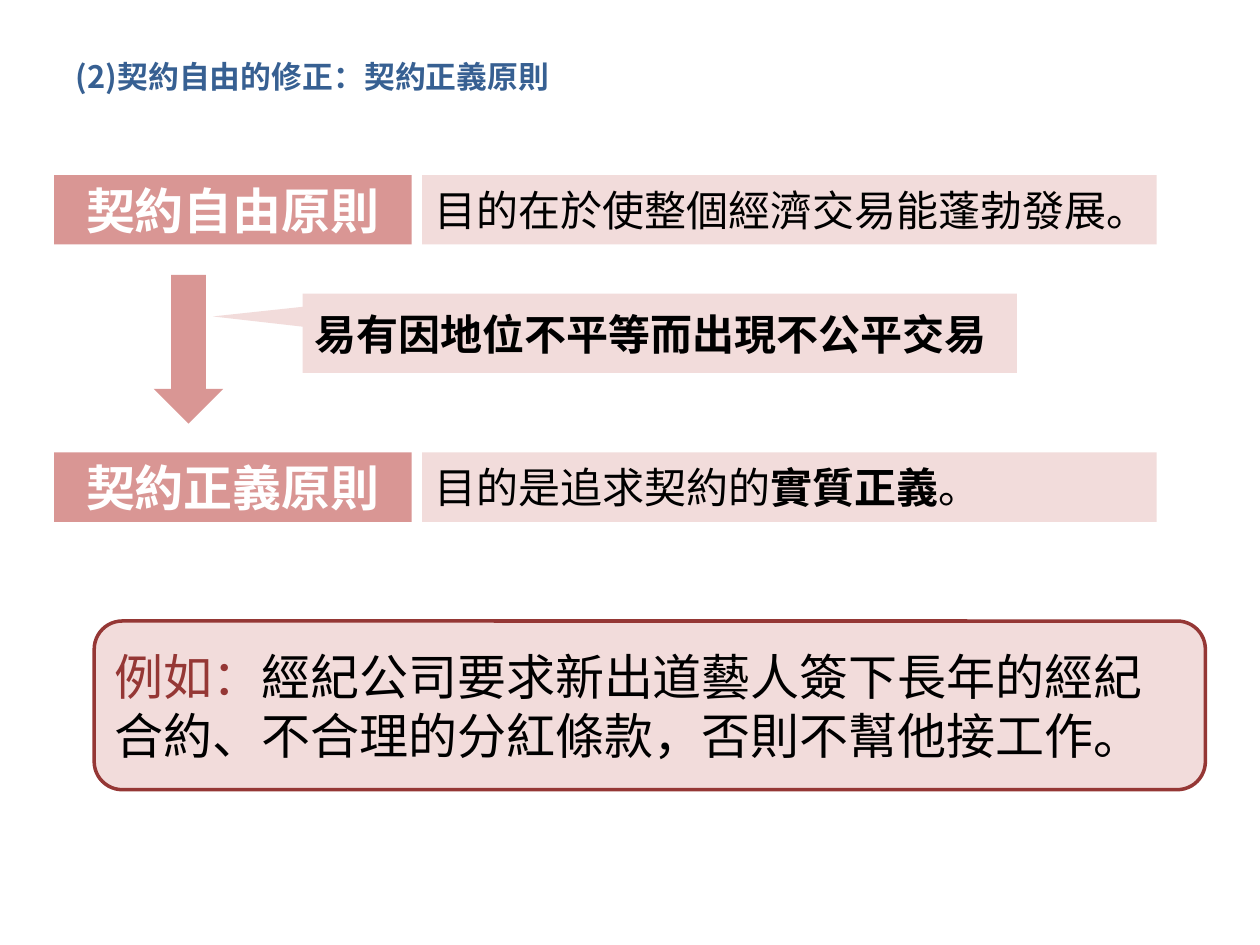
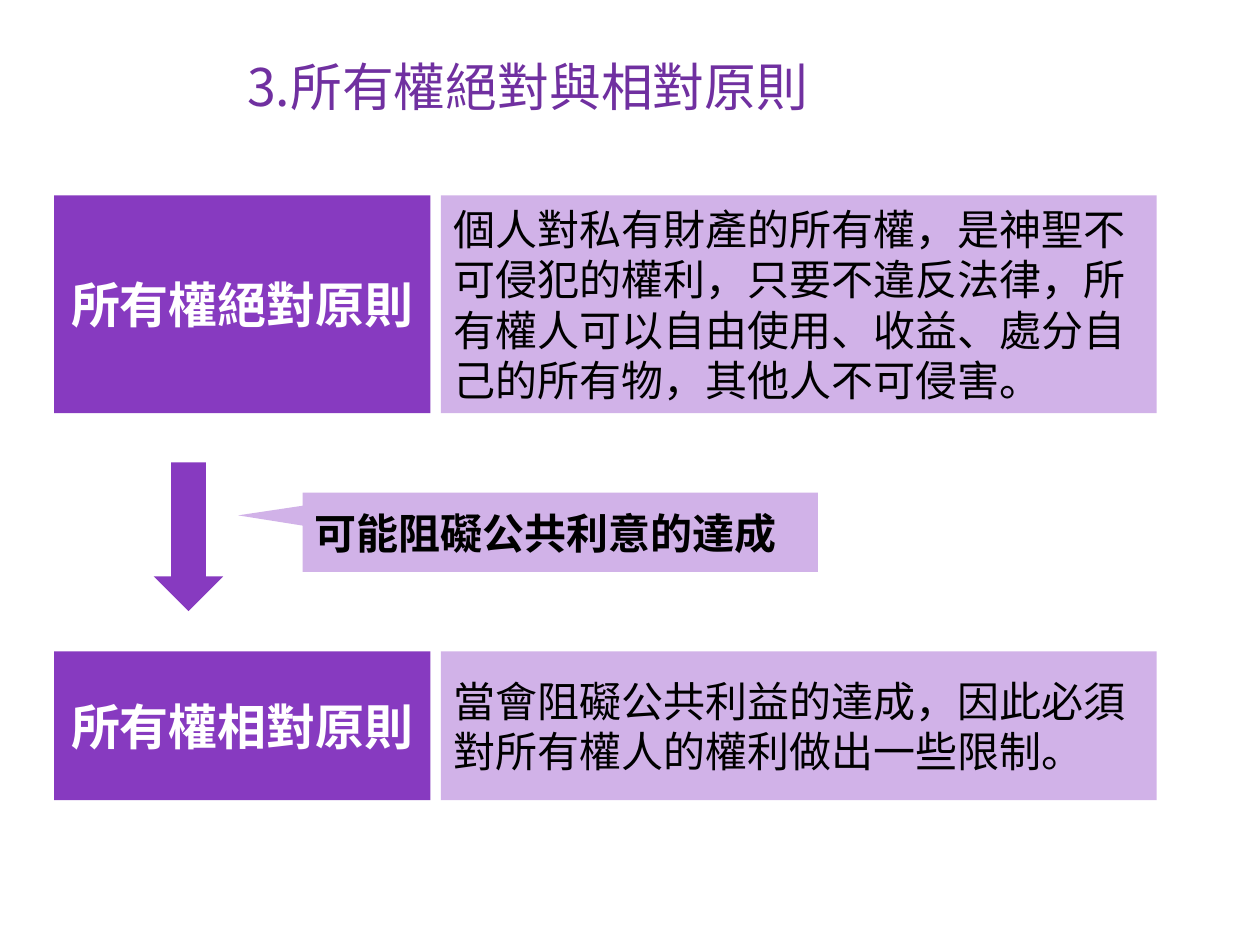
from dataclasses import dataclass

from lxml import etree
from pptx import Presentation
from pptx.dml.color import RGBColor
from pptx.enum import shapes, text
from pptx.oxml.ns import qn
from pptx.util import Cm, Pt

SHAPE = shapes.MSO_SHAPE
ALIGN = text.PP_ALIGN
ANCHOR = text.MSO_ANCHOR


@dataclass
class Theme:
    font: str = "Noto Sans CJK SC"
    alt: str = "Noto Sans CJK JP"
    black: str = "000000"
    white: str = "FFFFFF"
    large: float = 28
    body: float = 24


THEME = Theme()

# Text is a list of (words, own style) runs; lengths are in centimetres.
SLIDES = [
    dict(
        title="(2)契約自由的修正：契約正義原則",
        head=dict(size=17.6, color="376092", bold=True), indent=0.25,
        dark="D99694", light="F2DCDB", label=7.21,
        rows=[
            (3.53, 1.4, "契約自由原則", [("目的在於使整個經濟交易能蓬勃發展。", {})]),
            (9.12, 1.4, "契約正義原則", [
                ("目的是追求契約的", {}), ("實質正義", dict(bold=True)), ("。", {})]),
        ],
        arrow=5.54,
        call=dict(words="易有因地位不平等而出現不公平交易", top=5.92, width=14.4, tip=4.29),
        case=dict(edge="953735", box=(1.9, 12.52, 22.4, 3.4), runs=[
            ("例如：", dict(color="953735")),
            ("經紀公司要求新出道藝人簽下長年的經紀合約、不合理的分紅條款，否則不幫他接工作。", {})]),
    ),
    dict(
        title="3.所有權絕對與相對原則",
        head=dict(size=29.6, color="7030A0", bold=False), indent=3.7,
        dark="873AC0", light="D1B2E8", label=7.59,
        rows=[
            (3.94, 4.39, "所有權絕對原則", [
                ("個人對私有財產的所有權，是神聖不可侵犯的權利，只要不違反法律，"
                 "所有權人可以自由使用、收益、處分自己的所有物，其他人不可侵害。", {})]),
            (13.13, 3.0, "所有權相對原則", [
                ("當會阻礙公共利益的達成，因此必須對所有權人的權利做出一些限制。", {})]),
        ],
        arrow=9.32,
        call=dict(words="可能阻礙公共利意的達成", top=9.93, width=10.39, tip=4.8),
    ),
]

LEFT, RIGHT, GAP = 1.09, 23.32, 0.21
ARROW = (3.1, 1.4, 3.0)     # left, width, height
CALL = (6.1, 1.6, 0.46)     # left, height, drop from top to tip


def style(font, size=None, color=None, bold=None):
    if size:
        font.size = Pt(size)
    if color:
        font.color.rgb = RGBColor.from_string(color)
    if bold is not None:
        font.bold = bold


def write(frame, runs, name=THEME.font, align=ALIGN.LEFT, **look):
    """Fill the frame's first paragraph and set its Latin and East Asian font."""
    para = frame.paragraphs[0]
    para.alignment = align
    for words, own in runs:
        run = para.add_run()
        run.text = words
        style(run.font, **own)
    para.font.name = name
    style(para.font, **look)
    props = para._p.pPr.find(qn("a:defRPr"))
    etree.SubElement(props, qn("a:ea")).set("typeface", name)
    return para


def draw(slide, kind, box, fill, edge=None):
    shape = slide.shapes.add_shape(kind, *map(Cm, box))
    shape.shadow.inherit = False
    shape.fill.solid()
    shape.fill.fore_color.rgb = RGBColor.from_string(fill)
    if edge:
        shape.line.color.rgb = RGBColor.from_string(edge)
        shape.line.width = Pt(2)
    else:
        shape.line.fill.background()
    shape.text_frame.vertical_anchor = ANCHOR.MIDDLE
    return shape


def add_title(slide, data):
    title = slide.shapes.title
    title.left, title.top, title.width, title.height = map(Cm, (1.28, 1.12, 22.86, 1.5))
    frame = title.text_frame
    frame.vertical_anchor = ANCHOR.TOP
    frame.auto_size = text.MSO_AUTO_SIZE.NONE
    frame.margin_left = Cm(data["indent"])
    para = write(frame, [(data["title"], {})], **data["head"])
    para.line_spacing = 0.9


def add_row(slide, data, row):
    top, high, label, runs = row
    start = LEFT + data["label"] + GAP
    name = draw(slide, SHAPE.RECTANGLE, (LEFT, top, data["label"], high), data["dark"])
    write(name.text_frame, [(label, {})], align=ALIGN.CENTER,
          size=THEME.large, color=THEME.white, bold=True)
    note = draw(slide, SHAPE.RECTANGLE, (start, top, RIGHT - start, high), data["light"])
    write(note.text_frame, runs, size=THEME.body, color=THEME.black)


def add_call(slide, fill, words, top, width, tip):
    left, high, drop = CALL
    call = draw(slide, SHAPE.RECTANGULAR_CALLOUT, (left, top, width, high), fill)
    call.adjustments[0] = (tip - left) / width - 0.5
    call.adjustments[1] = drop / high - 0.5
    write(call.text_frame, [(words, {})], size=THEME.body, color=THEME.black, bold=True)


def add_case(slide, fill, edge, box, runs):
    case = draw(slide, SHAPE.ROUNDED_RECTANGLE, box, fill, edge)
    write(case.text_frame, runs, name=THEME.alt, size=THEME.large, color=THEME.black)


def main():
    deck = Presentation()
    deck.slide_width, deck.slide_height = Cm(25.4), Cm(19.05)
    for data in SLIDES:
        slide = deck.slides.add_slide(deck.slide_layouts[5])
        add_title(slide, data)
        for row in data["rows"]:
            add_row(slide, data, row)
        left, width, high = ARROW
        draw(slide, SHAPE.DOWN_ARROW, (left, data["arrow"], width, high), data["dark"])
        add_call(slide, data["light"], **data["call"])
        if "case" in data:
            add_case(slide, data["light"], **data["case"])
    deck.save("out.pptx")


if __name__ == "__main__":
    main()
